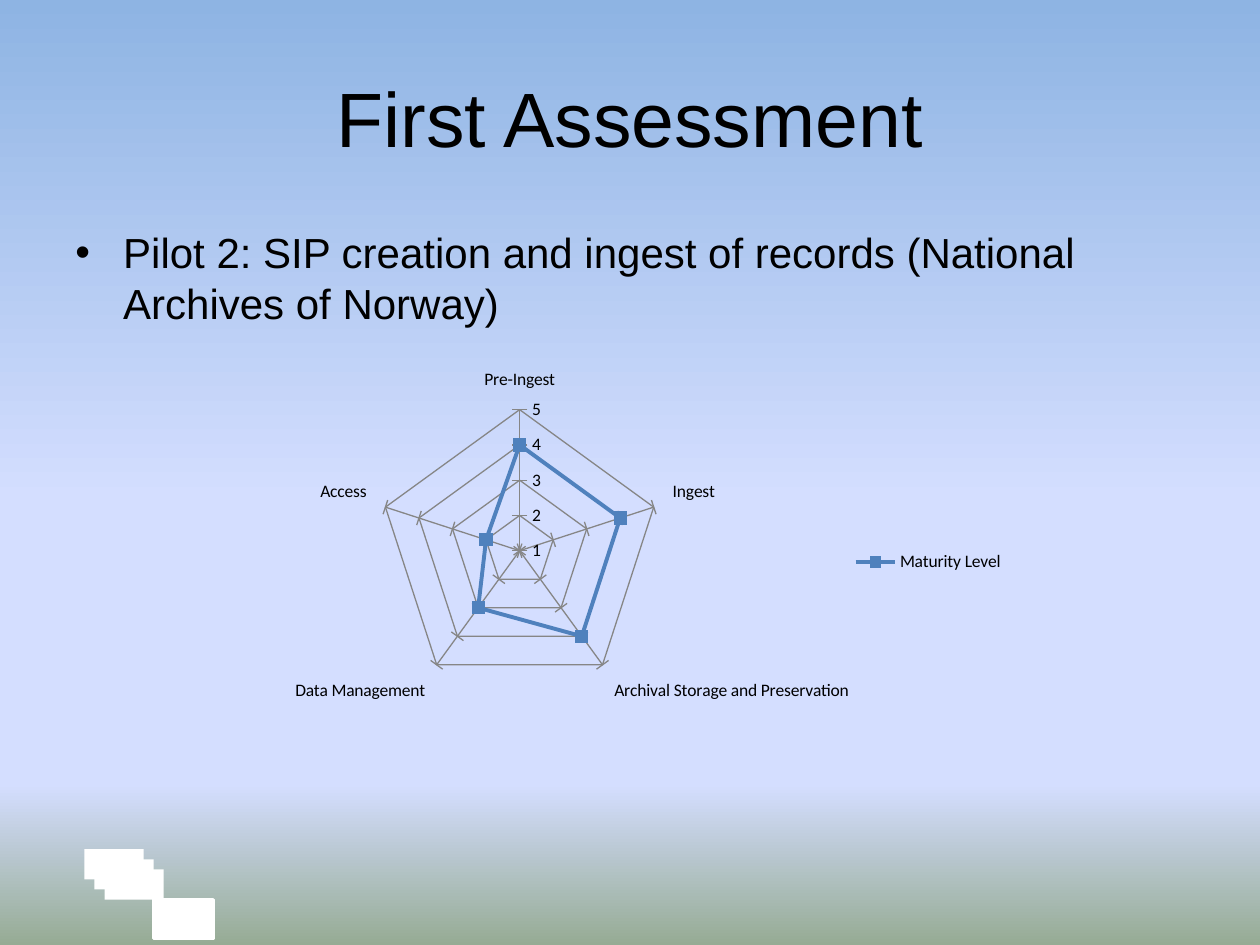
from lxml import etree
from pptx import Presentation
from pptx.chart.data import CategoryChartData
from pptx.dml.color import RGBColor
from pptx.enum.chart import (
    XL_CHART_TYPE as ChartType,
    XL_LEGEND_POSITION as LegendPosition,
    XL_MARKER_STYLE as MarkerStyle,
    XL_TICK_MARK as TickMark,
)
from pptx.enum.shapes import MSO_SHAPE as Preset
from pptx.enum.text import MSO_ANCHOR as Anchor, PP_ALIGN as Align
from pptx.oxml.ns import qn
from pptx.util import Inches, Pt

COLORS = {
    "text": "000000",
    "block": "FFFFFF",
    "series": "4F81BD",
    "grid": "868686",
    "sky": "8EB4E3",
    "haze": "D4DEFF",
    "ground": "96AB94",
}
BACKGROUND_STOPS = [(0, "sky"), (53, "haze"), (83, "haze"), (100, "ground")]
MATURITY = {
    "Pre-Ingest": 4,
    "Ingest": 4,
    "Archival Storage and Preservation": 4,
    "Data Management": 3,
    "Access": 2,
}
PLOT_LAYOUT = {"x": 0.206, "y": 0.161, "w": 0.351, "h": 0.631}


def color(name):
    return RGBColor.from_string(COLORS[name])


def set_format(target, values):
    for name, value in values.items():
        setattr(target, name, value)


def add_element(parent, tag, **attributes):
    return etree.SubElement(parent, qn(tag), attributes)


def paint_background(slide):
    fill = slide.background.fill
    fill.gradient()
    fill.gradient_angle = 270
    stops = slide.background._cSld.find(".//" + qn("a:gsLst"))
    for stop in list(stops):
        stops.remove(stop)
    for percent, name in BACKGROUND_STOPS:
        stop = add_element(stops, "a:gs", pos=str(percent * 1000))
        add_element(stop, "a:srgbClr", val=COLORS[name])


def add_block(slide, left, top, width, height):
    block = slide.shapes.add_shape(
        Preset.RECTANGLE, Inches(left), Inches(top), Inches(width), Inches(height)
    )
    block.shadow.inherit = False
    block.fill.solid()
    block.fill.fore_color.rgb = color("block")
    block.line.fill.background()
    return block


def add_corner_blocks(slide, left, top):
    front = add_block(slide, left + 0.55, top + 0.4, 0.47, 0.31)
    front.line.color.rgb = color("block")
    front.line.width = Pt(2)
    for step in (2, 1, 0):
        add_block(slide, left + 0.08 * step, top + 0.08 * step, 0.47, 0.24)


def add_text(slide, box, text, size, anchor, align, bullet=None):
    shape = slide.shapes.add_textbox(*map(Inches, box))
    set_format(shape.text_frame, {"word_wrap": True, "vertical_anchor": anchor})
    paragraph = shape.text_frame.paragraphs[0]
    paragraph.alignment = align
    if bullet:
        properties = paragraph._p.get_or_add_pPr()
        indent = Inches(0.38)
        properties.set("marL", str(indent))
        properties.set("indent", str(-indent))
        add_element(properties, "a:buFont", typeface="Arial")
        add_element(properties, "a:buChar", char=bullet)
    run = paragraph.add_run()
    run.text = text
    set_format(run.font, {"name": "Arial", "size": Pt(size)})
    run.font.color.rgb = color("text")


def place_plot(chart):
    plot_area = chart._chartSpace.chart.plotArea
    for old_layout in plot_area.findall(qn("c:layout")):
        plot_area.remove(old_layout)
    layout = etree.Element(qn("c:layout"))
    manual = add_element(layout, "c:manualLayout")
    add_element(manual, "c:layoutTarget", val="inner")
    for mode in ("xMode", "yMode"):
        add_element(manual, f"c:{mode}", val="edge")
    for name, value in PLOT_LAYOUT.items():
        add_element(manual, f"c:{name}", val=str(value))
    plot_area.insert(0, layout)


def add_maturity_chart(slide, box):
    data = CategoryChartData()
    data.categories = list(MATURITY)
    data.add_series("Maturity Level", list(MATURITY.values()))
    chart = slide.shapes.add_chart(
        ChartType.RADAR_MARKERS, *map(Inches, box), data
    ).chart
    set_format(chart, {"has_title": False, "has_legend": True})
    set_format(chart.font, {"name": "Calibri", "size": Pt(10)})
    chart.font.color.rgb = color("text")
    set_format(
        chart.legend,
        {"position": LegendPosition.RIGHT, "include_in_layout": False},
    )
    set_format(
        chart.value_axis,
        {"minimum_scale": 1, "maximum_scale": 5, "major_unit": 1},
    )
    axis_ticks = [
        (chart.category_axis, TickMark.OUTSIDE),
        (chart.value_axis, TickMark.CROSS),
    ]
    for axis, tick in axis_ticks:
        set_format(
            axis,
            {
                "has_major_gridlines": True,
                "major_tick_mark": tick,
                "minor_tick_mark": TickMark.NONE,
            },
        )
        for line in (axis.format.line, axis.major_gridlines.format.line):
            line.color.rgb = color("grid")
            line.width = Pt(0.75)
    plot = chart.plots[0]
    plot.vary_by_categories = False
    series = plot.series[0]
    series.format.line.color.rgb = color("series")
    series.format.line.width = Pt(2.25)
    set_format(series.marker, {"style": MarkerStyle.SQUARE, "size": 7})
    series.marker.format.fill.solid()
    series.marker.format.fill.fore_color.rgb = color("series")
    series.marker.format.line.color.rgb = color("series")
    place_plot(chart)


def main():
    presentation = Presentation()
    set_format(
        presentation, {"slide_width": Inches(10), "slide_height": Inches(7.5)}
    )
    slide = presentation.slides.add_slide(presentation.slide_layouts[6])
    paint_background(slide)
    add_corner_blocks(slide, 0.67, 6.74)
    add_text(
        slide, (0.5, 0.3, 9, 1.25), "First Assessment", 44, Anchor.MIDDLE, Align.CENTER
    )
    add_text(
        slide,
        (0.5, 1.75, 9, 4.95),
        "Pilot 2: SIP creation and ingest of records (National Archives of Norway)",
        24,
        Anchor.TOP,
        Align.LEFT,
        "•",
    )
    add_maturity_chart(slide, (1.69, 2.57, 6.38, 3.78))
    presentation.save("out.pptx")


if __name__ == "__main__":
    main()
